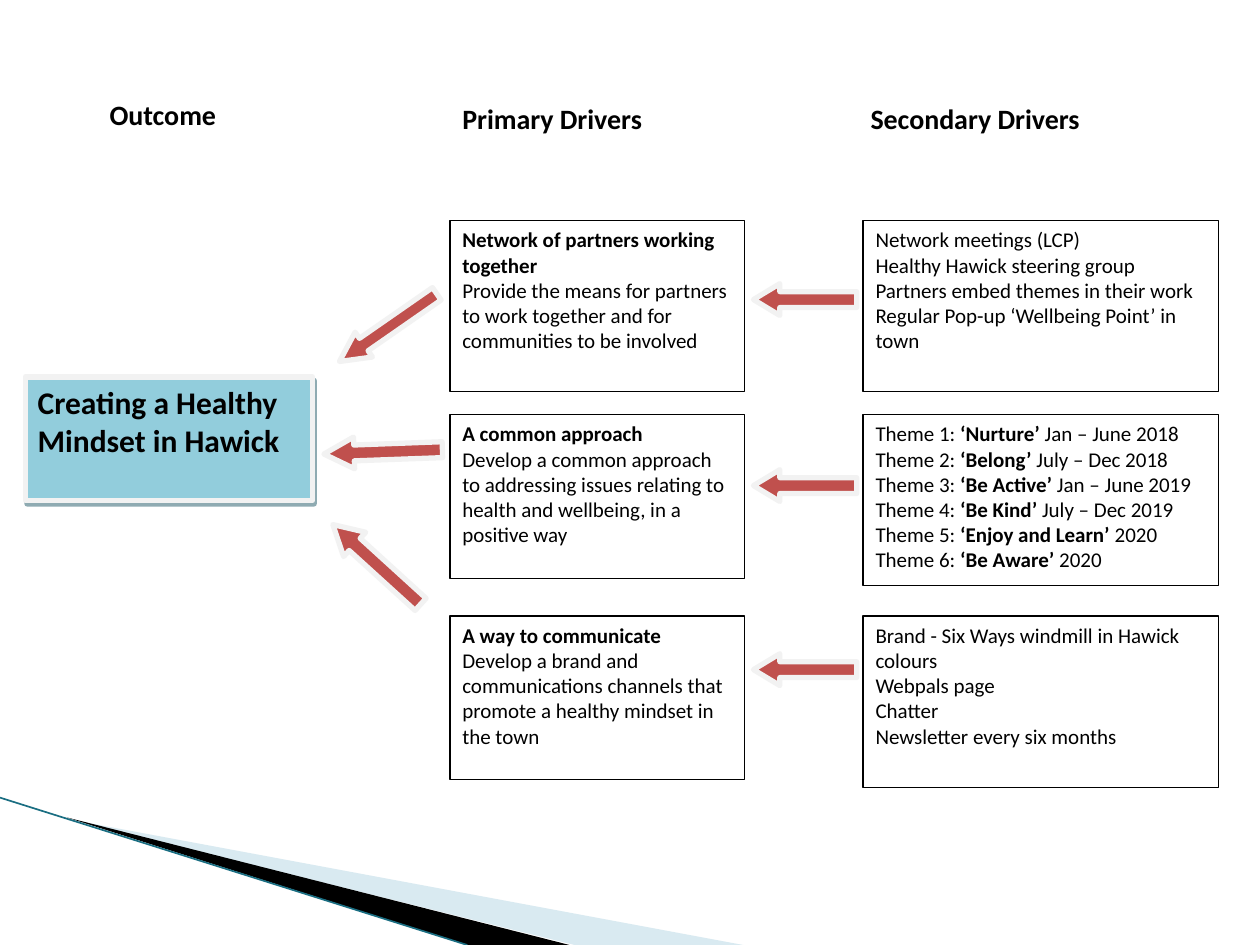
"""Build the driver diagram for a healthy mindset in Hawick."""
from lxml import etree
from pptx import Presentation, util as u
from pptx.dml.color import RGBColor
from pptx.enum import shapes, text
from pptx.oxml import parse_xml
from pptx.oxml.ns import nsdecls, qn


def colour(value):
    return RGBColor.from_string(value)


def write(shape, paragraphs, size=12, font="Calibri", ink="000000"):
    """Fill a shape with paragraphs in which *asterisks* mark bold words."""
    frame = shape.text_frame
    frame.word_wrap = True
    frame.vertical_anchor = text.MSO_ANCHOR.TOP
    for index, content in enumerate(paragraphs):
        paragraph = frame.paragraphs[0] if index == 0 else frame.add_paragraph()
        paragraph.alignment = text.PP_ALIGN.LEFT
        for part, words in enumerate(content.split("*")):
            if words:
                run = paragraph.add_run()
                run.text = words
                run.font.name = font
                run.font.size = u.Pt(size)
                run.font.bold = part % 2 == 1
                run.font.color.rgb = colour(ink)


presentation = Presentation()
presentation.slide_width, presentation.slide_height = u.Cm(25.4), u.Cm(19.05)
slide = presentation.slides.add_slide(presentation.slide_layouts[6])

wedges = [
    ("A0CBDC", 40, [(140, 1652), (1498, 1905), (1158, 1905)]),
    ("000000", 100, [(135, 1648), (1148, 1905), (942, 1905)]),
]
for fill, opacity, points in wedges:
    builder = slide.shapes.build_freeform(*points[0], scale=u.Cm(1) / 100)
    builder.add_line_segments(points[1:], close=True)
    wedge = builder.convert_to_shape()
    wedge.shadow.inherit = False
    wedge.fill.solid()
    wedge.fill.fore_color.rgb = colour(fill)
    wedge.line.fill.background()
    if opacity < 100:
        tint = wedge._element.spPr.find(".//" + qn("a:srgbClr"))
        etree.SubElement(tint, qn("a:alpha")).set("val", str(opacity * 1000))

edge = slide.shapes.add_connector(
    shapes.MSO_CONNECTOR.STRAIGHT, u.Cm(0), u.Cm(16.08), u.Cm(9.42), u.Cm(19.05))
edge.line.color.rgb = colour("1A6E82")
edge.line.width = u.Pt(0.95)
etree.SubElement(edge._element.spPr, qn("a:effectLst"))

outcome = slide.shapes.add_shape(
    shapes.MSO_SHAPE.RECTANGLE, u.Cm(0.51), u.Cm(7.6), u.Cm(5.79), u.Cm(2.49))
outcome.fill.solid()
outcome.fill.fore_color.rgb = colour("92CDDC")
outcome.line.color.rgb = colour("F2F2F2")
outcome.line.width = u.Pt(3)
outcome._element.spPr.append(parse_xml(
    f'<a:effectLst {nsdecls("a")}><a:outerShdw dist="28400" dir="3780000" rotWithShape="0">'
    '<a:srgbClr val="205867"><a:alpha val="50000"/></a:srgbClr></a:outerShdw></a:effectLst>'))
write(outcome, ["*Creating a Healthy Mindset in Hawick*"], size=18)

headings = [
    (1.96, 1.85, 2.8, "Outcome"),
    (9.07, 1.93, 5.94, "Primary Drivers"),
    (17.3, 1.93, 7.01, "Secondary Drivers"),
]
for left, top, width, label in headings:
    heading = slide.shapes.add_textbox(u.Cm(left), u.Cm(top), u.Cm(width), u.Cm(1.4))
    write(heading, [f"*{label}*"], size=16)

primary_left, primary_width = 9.07, 5.94
secondary_left, secondary_width = 17.4, 7.16
rows = [
    (4.45, 3.45, 5.72,
     ["*Network of partners working together*",
      "Provide the means for partners to work together and for communities to be involved"],
     ["Network meetings (LCP)",
      "Healthy Hawick steering group",
      "Partners embed themes in their work",
      "Regular Pop-up ‘Wellbeing Point’ in town"]),
    (8.36, 3.3, 9.47,
     ["*A common approach*",
      "Develop a common approach to addressing issues relating to health and wellbeing, "
      "in a positive way"],
     ["Theme 1: *‘Nurture’* Jan – June 2018",
      "Theme 2: *‘Belong’* July – Dec 2018",
      "Theme 3: *‘Be Active’ *Jan – June 2019",
      "Theme 4: *‘Be Kind’ *July – Dec 2019",
      "Theme 5:* ‘Enjoy and Learn’* 2020",
      "Theme 6: *‘Be Aware’ *2020"]),
    (12.42, 3.3, 13.18,
     ["*A way to communicate*",
      "Develop a brand and communications channels that promote a healthy mindset in the town"],
     ["Brand - Six Ways windmill in Hawick colours",
      "Webpals page",
      "Chatter",
      "Newsletter every six months"]),
]
arrows = [
    (6.63, 6.3, 2.39, 0.61, 325.2, 0.98),
    (6.53, 8.79, 2.39, 0.64, 357.9, 0.95),
    (6.4, 11.05, 2.39, 0.66, 42.3, 0.9),
]
for top, height, arrow_top, primary, secondary in rows:
    arrows.append((15.19, arrow_top, 2.08, 0.64, 0, 0.83))
    for left, width, tall, paragraphs in [
        (primary_left, primary_width, height, primary),
        (secondary_left, secondary_width, 3.45, secondary),
    ]:
        driver = slide.shapes.add_shape(
            shapes.MSO_SHAPE.RECTANGLE, u.Cm(left), u.Cm(top), u.Cm(width), u.Cm(tall))
        driver.shadow.inherit = False
        driver.fill.solid()
        driver.fill.fore_color.rgb = colour("FFFFFF")
        driver.line.color.rgb = colour("000000")
        driver.line.width = u.Pt(0.75)
        write(driver, paragraphs)

for left, top, width, height, rotation, head in arrows:
    arrow = slide.shapes.add_shape(
        shapes.MSO_SHAPE.LEFT_ARROW, u.Cm(left), u.Cm(top), u.Cm(width), u.Cm(height))
    arrow.shadow.inherit = False
    arrow.rotation = rotation
    arrow.adjustments[1] = head
    arrow.fill.solid()
    arrow.fill.fore_color.rgb = colour("C0504D")
    arrow.line.color.rgb = colour("F2F2F2")
    arrow.line.width = u.Pt(3)

presentation.save("out.pptx")
